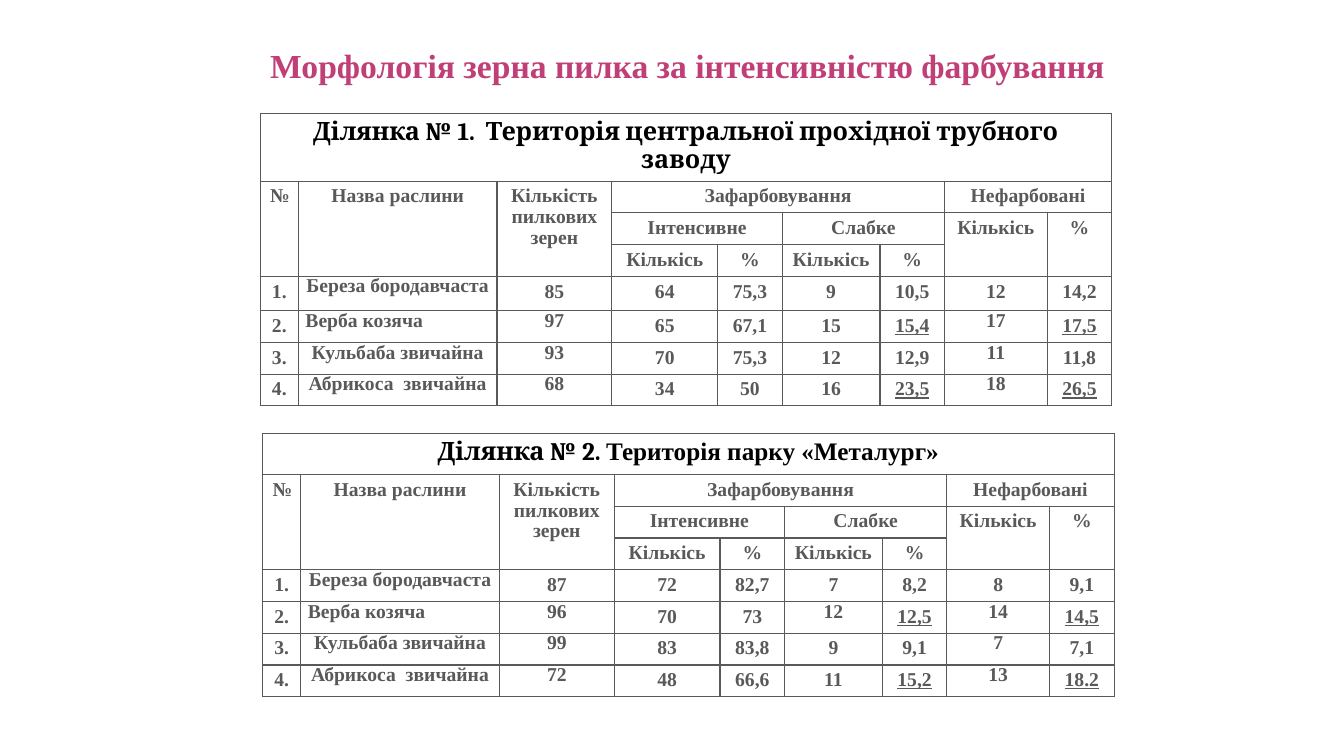
from dataclasses import dataclass

from lxml.etree import SubElement
from pptx import Presentation
from pptx.dml.color import RGBColor
from pptx.enum.text import MSO_ANCHOR, PP_ALIGN
from pptx.oxml.ns import qn
from pptx.util import Pt


@dataclass(frozen=True)
class Theme:
    accent: str = "C13F77"
    heading: str = "000000"
    text: str = "595959"
    background: str = "FFFFFF"
    font: str = "Times New Roman"
    heading_font: str = "Cambria"
    title_size: float = 24
    heading_size: float = 18
    cell_size: float = 14
    cell_line_spacing: float = 0.96
    border_width: float = 1


COLUMN_WIDTHS = [27.4, 141.8, 82.1, 75.6, 46.1, 69.8, 46.1, 73.4, 46.1]
ROW_HEIGHT = 22.7
# text, row, column, rows spanned, columns spanned
HEADERS = [
    ("№", 1, 0, 3, 1),
    ("Назва раслини", 1, 1, 3, 1),
    ("Кількість пилкових зерен", 1, 2, 3, 1),
    ("Зафарбовування", 1, 3, 1, 4),
    ("Нефарбовані", 1, 7, 1, 2),
    ("Інтенсивне", 2, 3, 1, 2),
    ("Слабке", 2, 5, 1, 2),
    ("Кількісь", 2, 7, 2, 1),
    ("%", 2, 8, 2, 1),
    ("Кількісь", 3, 3, 1, 1),
    ("%", 3, 4, 1, 1),
    ("Кількісь", 3, 5, 1, 1),
    ("%", 3, 6, 1, 1),
]
PLANTS = ["Береза бородавчаста", "Верба козяча", "Кульбаба звичайна", "Абрикоса  звичайна"]
FIRST_PLANT_ROW = 4
PLANT_COLUMN = 1
LEFT_ALIGNED_PLANT = 1
UNDERLINED = {(row, column) for row in (1, 3) for column in (6, 8)}
# plant row, column of the cells without top and bottom margins
TIGHT = {(row, PLANT_COLUMN) for row in range(4)} | {
    (row, column) for row in (1, 2, 3) for column in (2, 7)
}

FACTORY_VALUES = [
    ["85", "64", "75,3", "9", "10,5", "12", "14,2"],
    ["97", "65", "67,1", "15", "15,4", "17", "17,5"],
    ["93", "70", "75,3", "12", "12,9", "11", "11,8"],
    ["68", "34", "50", "16", "23,5", "18", "26,5"],
]
PARK_VALUES = [
    ["87", "72", "82,7", "7", "8,2", "8", "9,1"],
    ["96", "70", "73", "12", "12,5", "14", "14,5"],
    ["99", "83", "83,8", "9", "9,1", "7", "7,1"],
    ["72", "48", "66,6", "11", "15,2", "13", "18.2"],
]


def add_text(paragraph, text, *, font, size, color, underline=False,
             align=PP_ALIGN.CENTER, line_spacing=1.0):
    paragraph.alignment = align
    paragraph.line_spacing = line_spacing
    run = paragraph.add_run()
    run.text = text
    run.font.name = font
    run.font.size = Pt(size)
    run.font.bold = True
    run.font.underline = underline
    run.font.color.rgb = RGBColor.from_string(color)


class SlideBuilder:
    def __init__(self, presentation, theme):
        self.theme = theme
        self.slide = presentation.slides.add_slide(presentation.slide_layouts[5])

    def title(self, text, left, top, width, height):
        shape = self.slide.shapes.title
        shape.left, shape.top, shape.width, shape.height = map(Pt, (left, top, width, height))
        shape.text_frame.word_wrap = True
        shape.text_frame.vertical_anchor = MSO_ANCHOR.TOP
        add_text(shape.text_frame.paragraphs[0], text, font=self.theme.font,
                 size=self.theme.title_size, color=self.theme.accent, align=PP_ALIGN.LEFT)

    def style_cell(self, cell):
        cell.fill.solid()
        cell.fill.fore_color.rgb = RGBColor.from_string(self.theme.background)
        properties = cell._tc.get_or_add_tcPr()
        for position, side in enumerate(("a:lnL", "a:lnR", "a:lnT", "a:lnB")):
            line = SubElement(properties, qn(side), w=str(Pt(self.theme.border_width)))
            properties.insert(position, line)
            fill = SubElement(line, qn("a:solidFill"))
            SubElement(fill, qn("a:srgbClr"), val=self.theme.text)

    def cell_text(self, cell, text, **text_format):
        add_text(cell.text_frame.paragraphs[0], text, font=self.theme.font,
                 size=self.theme.cell_size, color=self.theme.text,
                 line_spacing=self.theme.cell_line_spacing, **text_format)

    def pollen_table(self, heading_runs, values, left, top, heading_height,
                     first_plant_height=ROW_HEIGHT, tight=TIGHT):
        """Add a plot's table; heading_runs holds (text, font) pairs."""
        heights = [heading_height] + [ROW_HEIGHT] * 7
        heights[FIRST_PLANT_ROW] = first_plant_height
        table = self.slide.shapes.add_table(
            len(heights), len(COLUMN_WIDTHS), Pt(left), Pt(top),
            Pt(sum(COLUMN_WIDTHS)), Pt(sum(heights))).table
        table.first_row = table.horz_banding = False
        for column, width in zip(table.columns, COLUMN_WIDTHS):
            column.width = Pt(width)
        for row, height in zip(table.rows, heights):
            row.height = Pt(height)
        for cell in table.iter_cells():
            self.style_cell(cell)

        heading = table.cell(0, 0)
        heading.merge(table.cell(0, len(COLUMN_WIDTHS) - 1))
        for text, font in heading_runs:
            add_text(heading.text_frame.paragraphs[0], text, font=font,
                     size=self.theme.heading_size, color=self.theme.heading,
                     line_spacing=self.theme.cell_line_spacing)

        for text, row, column, row_span, column_span in HEADERS:
            cell = table.cell(row, column)
            if row_span * column_span > 1:
                cell.merge(table.cell(row + row_span - 1, column + column_span - 1))
            self.cell_text(cell, text)

        for row, (plant, counts) in enumerate(zip(PLANTS, values)):
            for column, text in enumerate([f"{row + 1}.", plant, *counts]):
                cell = table.cell(FIRST_PLANT_ROW + row, column)
                if (row, column) in tight:
                    cell.margin_left = cell.margin_right = Pt(5)
                    cell.margin_top = cell.margin_bottom = 0
                is_left = (row, column) == (LEFT_ALIGNED_PLANT, PLANT_COLUMN)
                self.cell_text(cell, text, underline=(row, column) in UNDERLINED,
                               align=PP_ALIGN.LEFT if is_left else PP_ALIGN.CENTER)


def main():
    presentation = Presentation()
    presentation.slide_width, presentation.slide_height = Pt(960), Pt(540)
    theme = Theme()
    builder = SlideBuilder(presentation, theme)
    builder.title("Морфологія зерна пилка за інтенсивністю фарбування", 185.8, 28.8, 619.2, 36)
    builder.pollen_table(
        [("Ділянка № 1.  Територія центральної прохідної трубного заводу", theme.heading_font)],
        FACTORY_VALUES, 185.8, 80.8, heading_height=48.6, first_plant_height=24.5)
    builder.pollen_table(
        [("Ділянка № 2. ", theme.heading_font), ("Територія парку «Металург»", theme.font)],
        PARK_VALUES, 187.5, 309.5, heading_height=29.5, tight=TIGHT | {(1, 5)})
    presentation.save("out.pptx")


if __name__ == "__main__":
    main()
